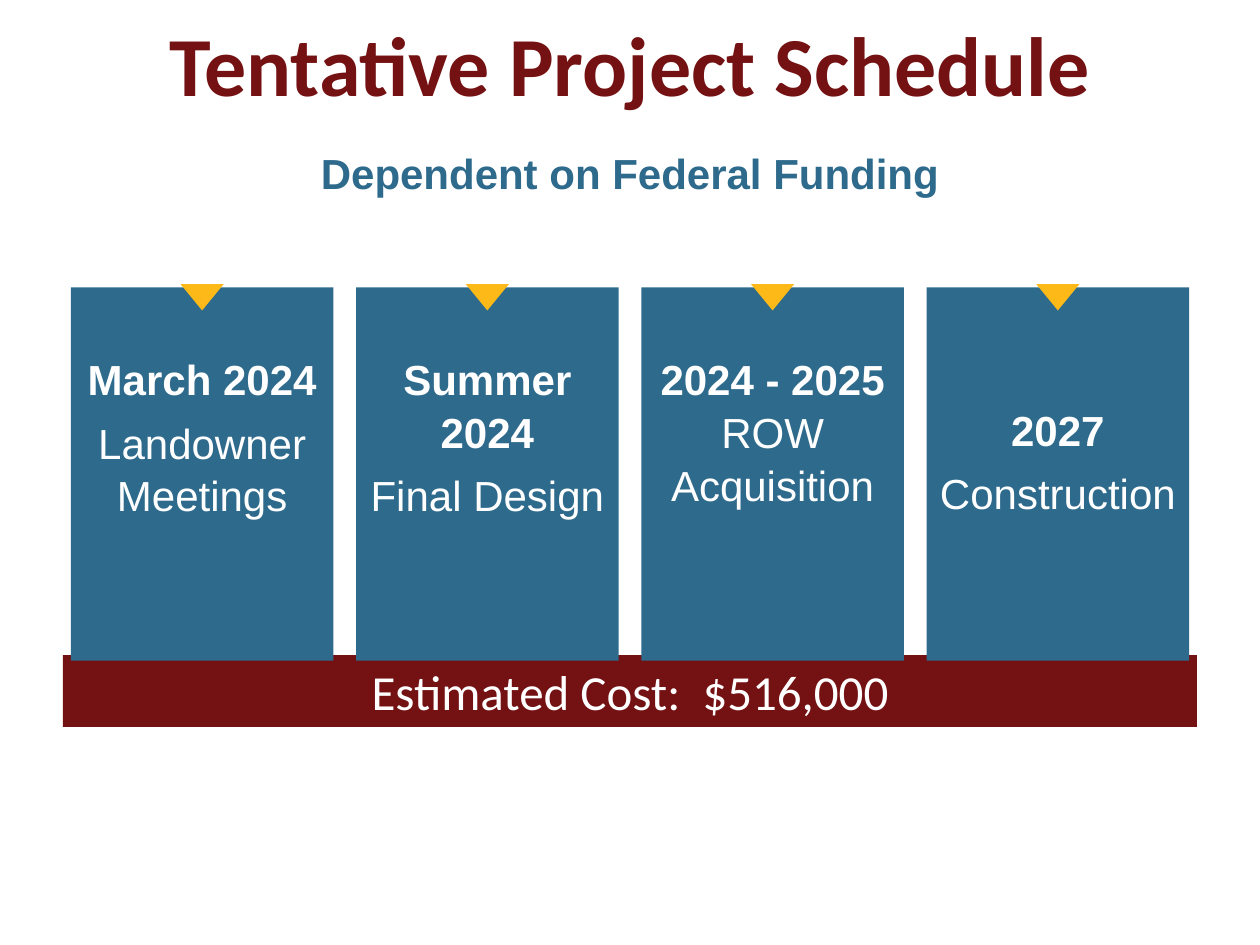
from pptx import Presentation
from pptx.dml.color import RGBColor
from pptx.enum.shapes import MSO_SHAPE
from pptx.enum.text import MSO_ANCHOR, PP_ALIGN
from pptx.util import Pt

MAROON, BLUE, GOLD, WHITE = "741112", "2E6A8C", "FDB917", "FFFFFF"


def color(hex_string):
    return RGBColor.from_string(hex_string)


class ScheduleSlide:
    """Holds the fonts and the slide that elements are added to."""

    heading_font = "Calibri"
    body_font = "Arial"

    def __init__(self, slide):
        self.slide = slide

    def format_paragraph(self, paragraph, text, size, text_color, font_name, bold=False):
        paragraph.text = text
        paragraph.alignment = PP_ALIGN.CENTER
        font = paragraph.font
        font.name, font.size, font.bold = font_name, Pt(size), bold
        font.color.rgb = color(text_color)

    def title(self, text, left, top, width, height):
        shape = self.slide.shapes.title
        shape.left, shape.top, shape.width, shape.height = map(Pt, (left, top, width, height))
        shape.text_frame.vertical_anchor = MSO_ANCHOR.MIDDLE
        self.format_paragraph(shape.text_frame.paragraphs[0], text, 48, MAROON,
                              self.heading_font, bold=True)

    def subtitle(self, text, left, top, width, height):
        frame = self.text_box(left, top, width, height)
        frame.vertical_anchor = MSO_ANCHOR.MIDDLE
        self.format_paragraph(frame.paragraphs[0], text, 24, BLUE, self.body_font, bold=True)

    def text_box(self, left, top, width, height):
        shape = self.slide.shapes.add_textbox(*map(Pt, (left, top, width, height)))
        shape.text_frame.word_wrap = True
        return shape.text_frame

    def block(self, kind, fill, left, top, width, height):
        shape = self.slide.shapes.add_shape(kind, *map(Pt, (left, top, width, height)))
        shape.shadow.inherit = False
        shape.fill.solid()
        shape.fill.fore_color.rgb = color(fill)
        shape.line.fill.background()
        return shape

    def cost_bar(self, text, left, top, width, height):
        frame = self.block(MSO_SHAPE.RECTANGLE, MAROON, left, top, width, height).text_frame
        frame.vertical_anchor = MSO_ANCHOR.TOP
        self.format_paragraph(frame.paragraphs[0], text, 28, WHITE, self.heading_font)

    def phase_text(self, date, activity, gap, left, top, width, height):
        frame = self.text_box(left, top, width, height)
        frame.margin_left = frame.margin_right = frame.margin_bottom = 0
        frame.margin_top = Pt(0.7)
        paragraphs = frame.paragraphs[0], frame.add_paragraph()
        for paragraph, text, bold in zip(paragraphs, (date, activity), (True, False)):
            self.format_paragraph(paragraph, text, 24, WHITE, self.body_font, bold)
            paragraph.line_spacing = 1.05
        paragraphs[0].space_after = Pt(gap)

    def phase(self, date, activity, gap, text_top, left, top, width, height):
        marker_width = 24.6
        self.block(MSO_SHAPE.RECTANGLE, BLUE, left, top, width, height)
        self.block(MSO_SHAPE.FLOWCHART_MERGE, GOLD, left + (width - marker_width) / 2,
                   top - 1.8, marker_width, 15)
        self.phase_text(date, activity, gap, left, text_top, width, 93.6)


def main():
    presentation = Presentation()
    presentation.slide_width, presentation.slide_height = Pt(720), Pt(540)
    schedule = ScheduleSlide(presentation.slides.add_slide(presentation.slide_layouts[5]))

    schedule.title("Tentative Project Schedule", 0, 0, 720, 72)
    schedule.subtitle("Dependent on Federal Funding", 160, 80.6, 400, 36)
    schedule.cost_bar("Estimated Cost:  $516,000", 36, 374.4, 648, 41)

    # Date, activity, gap between them, top of the text
    phases = [
        ("March 2024", "Landowner Meetings", 6, 200),
        ("Summer 2024", "Final Design", 6, 200),
        ("2024 - 2025", "ROW Acquisition", 0, 200),
        ("2027", "Construction", 6, 229),
    ]
    card_width, card_gap = 150, 13
    for index, phase in enumerate(phases):
        left = 40.5 + index * (card_width + card_gap)
        schedule.phase(*phase, left, 164.2, card_width, 213.4)

    presentation.save("out.pptx")


if __name__ == "__main__":
    main()
